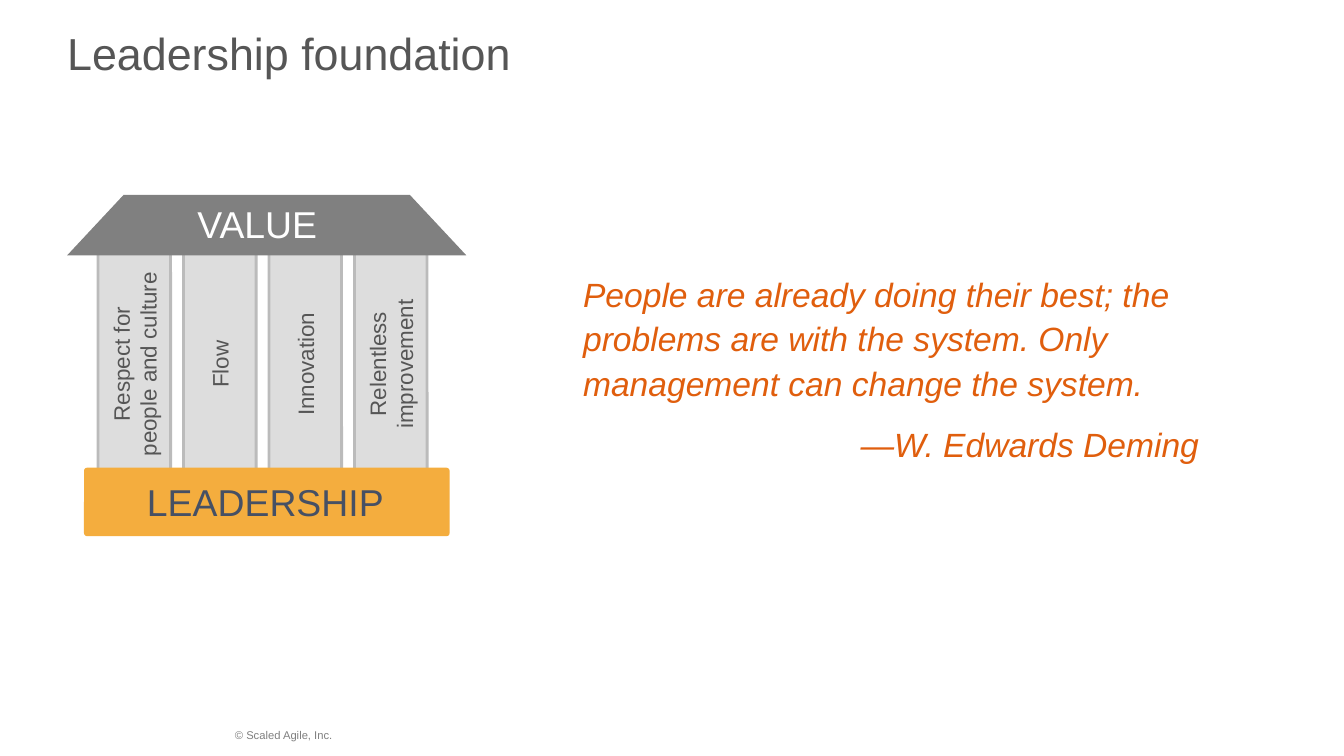
from pptx import Presentation
from pptx.dml.color import RGBColor
from pptx.enum.shapes import MSO_SHAPE as Shape
from pptx.enum.text import MSO_ANCHOR as Anchor, PP_ALIGN as Align
from pptx.util import Inches, Pt

COLORS = {
    "title": "565656", "quote": "E05E0D", "pillar": "DDDDDD", "edge": "BBBBBB",
    "roof": "808080", "base": "F4AD3E", "base_text": "465064", "white": "FFFFFF",
}
PILLARS = [
    (["Respect for", "people and culture"], 1.58),
    (["Flow"], 0.56),
    (["Innovation"], 0.98),
    (["Relentless", "improvement"], 1.17),
]


def rgb(name):
    """Return the named palette colour."""
    return RGBColor.from_string(COLORS[name])


def write(frame, lines, size, color, align=Align.LEFT, italic=False):
    """Fill a text frame with one paragraph per line and return the paragraphs."""
    frame.text = "\n".join(lines)
    look = {"name": "Arial", "size": Pt(size), "italic": italic, "bold": False}
    for para in frame.paragraphs:
        para.alignment = align
        for span in para.runs:
            for key, value in look.items():
                setattr(span.font, key, value)
            span.font.color.rgb = rgb(color)
    return frame.paragraphs


def add_text(page, box, lines, size, color, wrap=True, turn=0, **style):
    """Add a text box and return its paragraphs."""
    label = page.shapes.add_textbox(*map(Inches, box))
    label.rotation = turn
    label.text_frame.word_wrap = wrap
    return write(label.text_frame, lines, size, color, **style)


def add_block(page, kind, box, fill, adjust, edge=None):
    """Add a flat filled shape with an optional outline."""
    block = page.shapes.add_shape(kind, *map(Inches, box))
    block.shadow.inherit = False
    block.adjustments[0] = adjust
    block.fill.solid()
    block.fill.fore_color.rgb = rgb(fill)
    if edge:
        block.line.color.rgb = rgb(edge)
        block.line.width = Pt(1.5)
    else:
        block.line.fill.background()
    return block


def add_title(page, box):
    """Place and format the title placeholder."""
    title = page.shapes.title
    title.left, title.top, title.width, title.height = map(Inches, box)
    frame = title.text_frame
    for side in ("left", "top", "right", "bottom"):
        setattr(frame, f"margin_{side}", 0)
    frame.vertical_anchor = Anchor.TOP
    write(frame, ["Leadership foundation"], 24, "title")


def add_quote(page, box):
    """Add the quotation and its right-aligned author."""
    quote, author = add_text(page, box, [
        "People are already doing their best; the problems are with the system. "
        "Only management can change the system.",
        "—W. Edwards Deming",
    ], 18, "quote", italic=True)
    quote.line_spacing = author.line_spacing = 1.1
    quote.space_after = Pt(9)
    author.alignment = Align.RIGHT


def add_house(page, box):
    """Draw the house: four pillars between a roof and a foundation."""
    left, top, width, height = box
    pillar_width, pillar_height, pitch = 0.54, 1.71, 0.636
    first, pillar_top = left + 0.23, top + 0.39
    for index in range(len(PILLARS)):
        add_block(page, Shape.ROUNDED_RECTANGLE,
                  (first + index * pitch, pillar_top, pillar_width, pillar_height),
                  "pillar", 0.046, "edge")
    for index, (lines, length) in enumerate(PILLARS):
        depth = 0.1 + 0.2 * len(lines)
        center = first + index * pitch + pillar_width / 2
        middle = top + 1.26
        add_text(page, (center - length / 2, middle - depth / 2, length, depth),
                 lines, 12, "title", wrap=False, turn=270, align=Align.CENTER)
    add_block(page, Shape.TRAPEZOID, (left, top, width, 0.45), "roof", 0.934)
    add_text(page, (left + 0.87, top, 1.1, 0.44), ["VALUE"], 20, "white", wrap=False)
    base_width, base_height = 2.72, 0.51
    base_left = left + (width - base_width) / 2
    add_block(page, Shape.ROUNDED_RECTANGLE,
              (base_left, top + height - base_height, base_width, base_height),
              "base", 0.046)
    add_text(page, (left + 0.12, top + 2.07, 2.71, 0.44), ["LEADERSHIP"],
             20, "base_text", align=Align.CENTER)


def main():
    """Build the slide and save the deck."""
    deck = Presentation()
    deck.slide_width = Inches(10)
    deck.slide_height = deck.slide_width * 9 // 16
    page = deck.slides.add_slide(deck.slide_layouts[5])
    add_text(page, (1.65, 5.37, 2.07, 0.2), ["© Scaled Agile, Inc."], 6, "roof")
    add_title(page, (0.5, 0.19, 9.11, 0.33))
    add_quote(page, (4.24, 1.96, 4.78, 1.56))
    add_house(page, (0.5, 1.45, 2.97, 2.54))
    deck.save("out.pptx")


if __name__ == "__main__":
    main()
